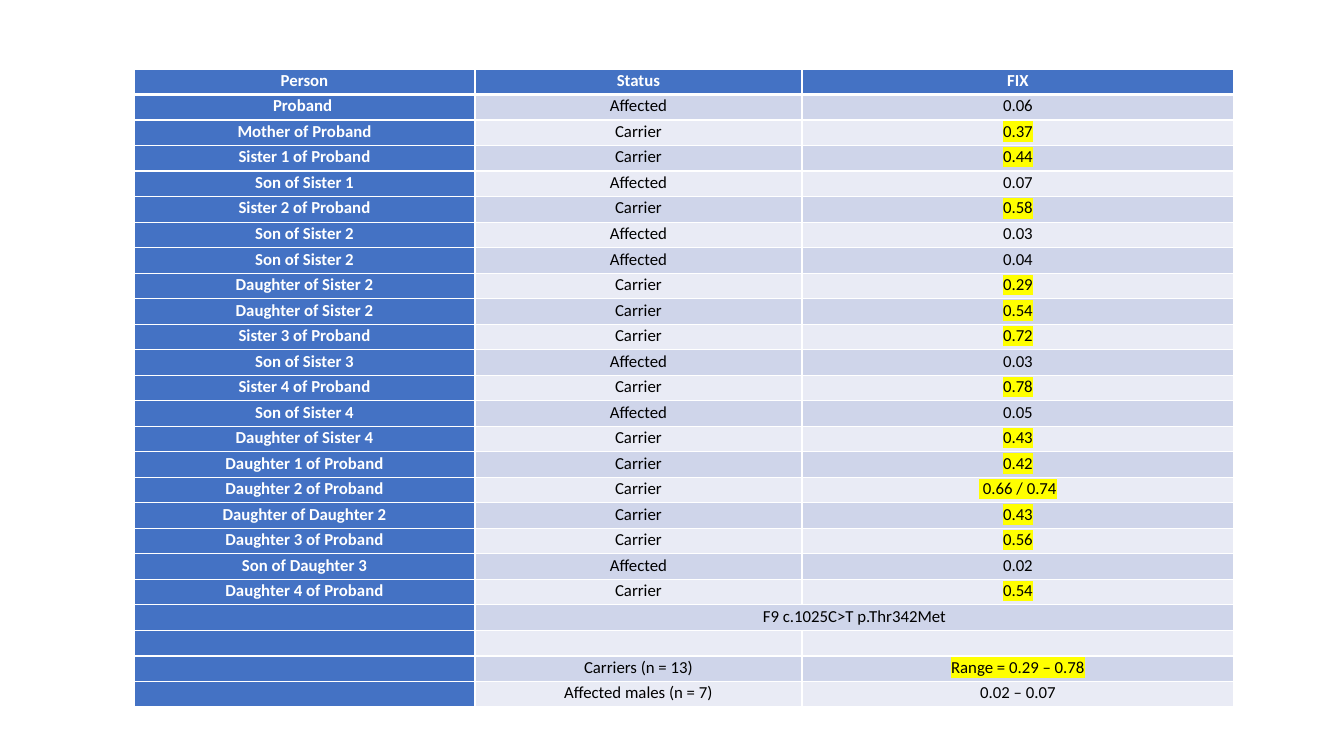
from typing import NamedTuple

from lxml import etree
from pptx import Presentation
from pptx import util as u
from pptx.dml.color import RGBColor
from pptx.enum import text
from pptx.oxml import ns

EMU_PER_INCH = 914400
PX_PER_INCH = 100.8
BLUE, DARK_BAND, LIGHT_BAND = "4472C4", "CFD5EA", "E9EBF5"
WHITE, BLACK, YELLOW = "FFFFFF", "000000", "FFFF00"
FONT, FONT_SIZE = "Calibri", 12
COLUMN_WIDTHS = (341, 327, 432)
TABLE_LEFT, TABLE_TOP, TABLE_HEIGHT = 134, 69, 638
THIN, THICK = 1, 3


class Row(NamedTuple):
    person: str = ""
    status: str = ""
    fix: str = ""
    marked: bool = False
    merged: bool = False


def carrier(person: str, fix: str) -> Row:
    return Row(person, "Carrier", fix, marked=True)


def affected(person: str, fix: str) -> Row:
    return Row(person, "Affected", fix)


ROWS = [
    Row("Person", "Status", "FIX"),
    affected("Proband ", "0.06"),
    carrier("Mother of Proband", "0.37"),
    carrier("Sister 1 of Proband", "0.44"),
    affected("Son of Sister 1", "0.07"),
    carrier("Sister 2 of Proband", "0.58"),
    affected("Son of Sister 2", "0.03"),
    affected("Son of Sister 2", "0.04"),
    carrier("Daughter of Sister 2", "0.29"),
    carrier("Daughter of Sister 2", "0.54"),
    carrier("Sister 3 of Proband", "0.72"),
    affected("Son of Sister 3", "0.03"),
    carrier("Sister 4 of Proband", "0.78"),
    affected("Son of Sister 4", "0.05"),
    carrier("Daughter of Sister 4", "0.43"),
    carrier("Daughter 1 of Proband", "0.42"),
    carrier("Daughter 2 of Proband", " 0.66 / 0.74"),
    carrier("Daughter of Daughter 2", "0.43"),
    carrier("Daughter 3 of Proband", "0.56"),
    affected("Son of Daughter 3", "0.02"),
    carrier("Daughter 4 of Proband", "0.54"),
    Row(status="F9 c.1025C>T p.Thr342Met", merged=True),
    Row(),
    Row(status="Carriers (n = 13)", fix="Range = 0.29 – 0.78", marked=True),
    Row(status="Affected males (n = 7)", fix="0.02 – 0.07"),
]


def px(count: int) -> u.Emu:
    return u.Emu(round(count * EMU_PER_INCH / PX_PER_INCH))


def color(value: str) -> RGBColor:
    return RGBColor.from_string(value)


def add_color(parent, tag: str, value: str) -> None:
    holder = etree.SubElement(parent, ns.qn(tag))
    etree.SubElement(holder, ns.qn("a:srgbClr"), val=value)


def set_borders(cell, top: int, bottom: int) -> None:
    """Draw white cell borders, with top and bottom widths in points."""
    properties = cell._tc.get_or_add_tcPr()
    sides = {"a:lnL": THIN, "a:lnR": THIN, "a:lnT": top, "a:lnB": bottom}
    for position, (tag, width) in enumerate(sides.items()):
        line = etree.Element(ns.qn(tag), w=str(u.Pt(width)))
        add_color(line, "a:solidFill", WHITE)
        properties.insert(position, line)


def write_cell(cell, words: str, heading: bool, marked: bool) -> None:
    cell.margin_left = cell.margin_right = px(8)
    cell.margin_top = cell.margin_bottom = 0
    para = cell.text_frame.paragraphs[0]
    para.alignment = text.PP_ALIGN.CENTER
    para.line_spacing = 1.07
    para.font.name = FONT
    para.font.size = u.Pt(FONT_SIZE)
    para.font.bold = heading
    para.font.color.rgb = color(WHITE if heading else BLACK)
    if not words:
        # An empty cell takes its line height from the paragraph end mark.
        etree.SubElement(para._p, ns.qn("a:endParaRPr"), sz=str(FONT_SIZE * 100))
        return
    span = para.add_run()
    span.text = words
    if marked:
        add_color(span._r.get_or_add_rPr(), "a:highlight", YELLOW)


def add_family_table(page) -> None:
    frame = page.shapes.add_table(
        len(ROWS), len(COLUMN_WIDTHS), px(TABLE_LEFT), px(TABLE_TOP),
        px(sum(COLUMN_WIDTHS)), px(TABLE_HEIGHT))
    table = frame.table
    table.first_col = True
    for column, width in zip(table.columns, COLUMN_WIDTHS):
        column.width = px(width)
    for number, row in enumerate(ROWS):
        table.rows[number].height = u.Emu(px(TABLE_HEIGHT) // len(ROWS))
        band = DARK_BAND if number % 2 else LIGHT_BAND
        for place, words in enumerate((row.person, row.status, row.fix)):
            cell = table.cell(number, place)
            heading = number == 0 or place == 0
            cell.fill.solid()
            cell.fill.fore_color.rgb = color(BLUE if heading else band)
            set_borders(cell, top=THICK if number == 1 else THIN,
                        bottom=THICK if number == 0 else THIN)
            write_cell(cell, words, heading, row.marked and place == 2)
        if row.merged:
            table.cell(number, 1).merge(table.cell(number, 2))


def main() -> None:
    deck = Presentation()
    deck.slide_width, deck.slide_height = px(1344), px(756)
    page = deck.slides.add_slide(deck.slide_layouts[6])
    add_family_table(page)
    deck.save("out.pptx")


if __name__ == "__main__":
    main()
